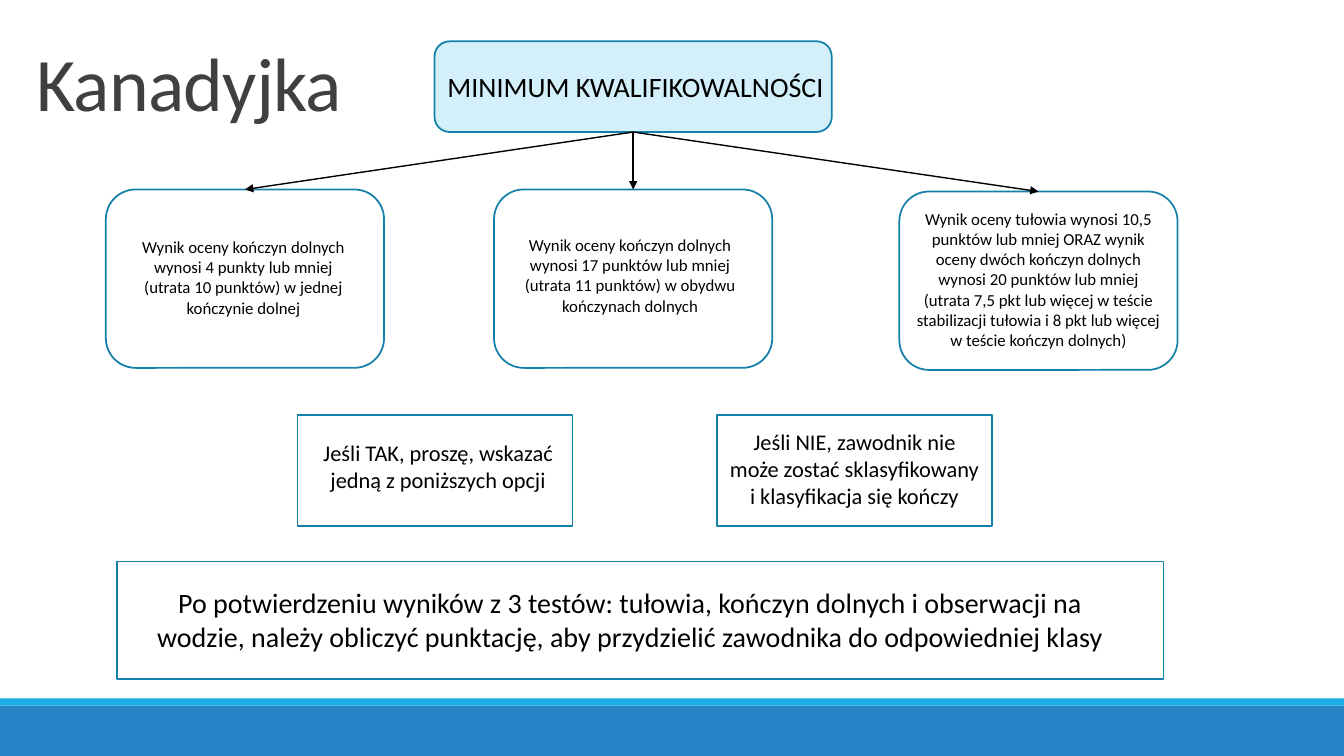
from lxml import etree
from pptx import Presentation
from pptx.dml.color import RGBColor
from pptx.enum.shapes import MSO_CONNECTOR, MSO_SHAPE
from pptx.enum.text import MSO_ANCHOR, MSO_AUTO_SIZE, PP_ALIGN
from pptx.oxml.ns import qn
from pptx.util import Inches, Pt

RECTANGLE, ROUNDED = MSO_SHAPE.RECTANGLE, MSO_SHAPE.ROUNDED_RECTANGLE
STRAIGHT = MSO_CONNECTOR.STRAIGHT
LEFT, CENTER = PP_ALIGN.LEFT, PP_ALIGN.CENTER
BOTTOM = MSO_ANCHOR.BOTTOM
NO_FIT, GROW = MSO_AUTO_SIZE.NONE, MSO_AUTO_SIZE.SHAPE_TO_FIT_TEXT
TOP_SITE, BOTTOM_SITE = 0, 2
TITLE_ONLY = 5

COLORS = {
    "title": "404040", "text": "000000", "outline": "1580A9", "header": "D2EFFA",
    "box": "FFFFFF", "band": "2683C6", "stripe": "1CADE4",
}

# Each criterion: box left, box top, text area, wording
CRITERIA = [
    (1.05, 1.88, (1.23, 2.3, 2.37, 0.91),
     "Wynik oceny kończyn dolnych wynosi 4 punkty lub mniej (utrata 10 punktów) "
     "w jednej kończynie dolnej"),
    (4.9, 1.88, (5.07, 2.28, 2.36, 0.91),
     "Wynik oceny kończyn dolnych wynosi 17 punktów lub mniej (utrata 11 punktów) "
     "w obydwu kończynach dolnych"),
    (8.92, 1.9, (8.99, 2.02, 2.62, 1.51),
     "Wynik oceny tułowia wynosi 10,5 punktów lub mniej ORAZ wynik oceny dwóch kończyn "
     "dolnych wynosi 20 punktów lub mniej (utrata 7,5 pkt lub więcej w teście "
     "stabilizacji tułowia i 8 pkt lub więcej w teście kończyn dolnych)"),
]

# Each outcome: box area, text area, text size, wording
OUTCOMES = [
    ((2.95, 4.12, 2.73, 1.1), (3.07, 4.31, 2.55, 0.64), 16,
     "Jeśli TAK, proszę, wskazać jedną z poniższych opcji"),
    ((7.11, 4.12, 2.73, 1.1), (7.11, 4.2, 2.73, 0.91), 16,
     "Jeśli NIE, zawodnik nie może zostać sklasyfikowany i klasyfikacja się kończy"),
    ((1.16, 5.57, 10.38, 1.17), (1.35, 5.76, 9.8, 0.77), 20,
     "Po potwierdzeniu wyników z 3 testów: tułowia, kończyn dolnych i obserwacji na "
     "wodzie, należy obliczyć punktację, aby przydzielić zawodnika do odpowiedniej klasy"),
]


def color(name):
    return RGBColor.from_string(COLORS[name])


class SlideBuilder:
    """Adds elements in one shared style to a slide; areas are in inches."""

    font = "Calibri"

    def __init__(self, slide):
        self.slide = slide

    def set_text(self, text_frame, text, size, color_name, alignment):
        text_frame.text = text
        text_frame.word_wrap = True
        paragraph = text_frame.paragraphs[0]
        paragraph.alignment = alignment
        font = paragraph.runs[0].font
        font.name, font.size = self.font, Pt(size)
        font.color.rgb = color(color_name)
        return paragraph

    def title(self, text, area):
        shape = self.slide.shapes.title
        shape.left, shape.top, shape.width, shape.height = map(Inches, area)
        paragraph = self.set_text(shape.text_frame, text, 54, "title", LEFT)
        paragraph.line_spacing = 0.85
        paragraph.runs[0].font._element.set("spc", "-50")
        shape.text_frame.vertical_anchor = BOTTOM
        shape.text_frame.auto_size = NO_FIT

    def box(self, kind, area, fill="box", outline="outline"):
        shape = self.slide.shapes.add_shape(kind, *map(Inches, area))
        shape.shadow.inherit = False
        shape.fill.solid()
        shape.fill.fore_color.rgb = color(fill)
        if outline:
            shape.line.color.rgb = color(outline)
            shape.line.width = Pt(1.25)
        else:
            shape.line.fill.background()
        return shape

    def text(self, text, area, size, alignment=CENTER):
        shape = self.slide.shapes.add_textbox(*map(Inches, area))
        self.set_text(shape.text_frame, text, size, "text", alignment)
        shape.text_frame.auto_size = GROW

    def arrow(self, source, target):
        """Joins the bottom of source to the top of target."""
        connector = self.slide.shapes.add_connector(STRAIGHT, 0, 0, 0, 0)
        connector.begin_connect(source, BOTTOM_SITE)
        connector.end_connect(target, TOP_SITE)
        connector.line.color.rgb = color("text")
        connector.line.width = Pt(1)
        properties = connector._element.spPr
        etree.SubElement(properties.find(qn("a:ln")), qn("a:tailEnd"), type="triangle")
        etree.SubElement(properties, qn("a:effectLst"))


def main():
    presentation = Presentation()
    presentation.slide_width, presentation.slide_height = Inches(13.33), Inches(7.5)
    slide = presentation.slides.add_slide(presentation.slide_layouts[TITLE_ONLY])
    builder = SlideBuilder(slide)

    builder.box(RECTANGLE, (0, 7, 13.33, 0.5), "band", None)
    builder.box(RECTANGLE, (0, 6.93, 13.33, 0.07), "stripe", None)
    builder.title("Kanadyjka", (0.26, 0.15, 4.04, 1.16))

    header = builder.box(ROUNDED, (4.31, 0.41, 3.94, 0.9), "header")
    builder.text("MINIMUM KWALIFIKOWALNOŚCI", (4.34, 0.64, 4, 0.44), 20, LEFT)

    for left, top, text_area, wording in CRITERIA:
        criterion = builder.box(ROUNDED, (left, top, 2.76, 1.77))
        builder.text(wording, text_area, 12)
        builder.arrow(header, criterion)

    for box_area, text_area, size, wording in OUTCOMES:
        builder.box(RECTANGLE, box_area)
        builder.text(wording, text_area, size)

    presentation.save("out.pptx")


if __name__ == "__main__":
    main()
